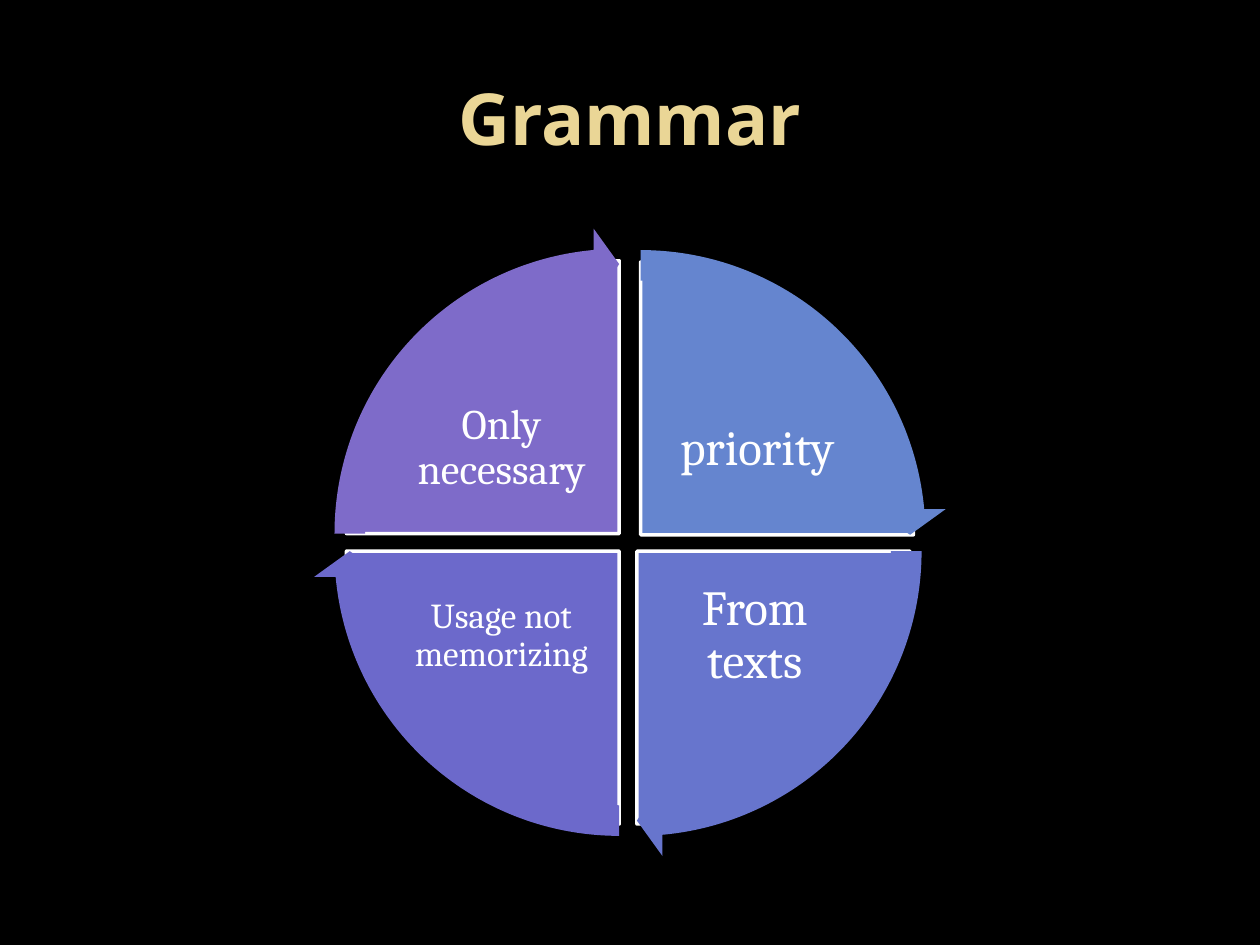
"""Build a slide with a four-part cycle wheel about grammar."""
from pptx import Presentation
from pptx.dml.color import RGBColor
from pptx.enum.shapes import MSO_SHAPE
from pptx.enum.text import MSO_ANCHOR, PP_ALIGN
from pptx.util import Inches, Pt

THEME = {
    "back": "000000", "title": "EAD696", "white": "FFFFFF",
    "parts": ["6585CF", "6775CD", "6C69CB", "7E6BC9"],
    "head": 41, "large": 28, "mid": 24, "small": 20,
    "sans": "Noto Sans", "serif": "Cambria",
}
PIE, RING = 4.33, 4.86
TURN, FULL, TIP = 54, 216, 3.275


def write(slide, text, box, inset, font, **para):
    area = slide.shapes.add_textbox(*map(Inches, box))
    frame = area.text_frame
    look = {"word_wrap": True, "vertical_anchor": MSO_ANCHOR.MIDDLE}
    for side in ("left", "right", "top", "bottom"):
        look[f"margin_{side}"] = Inches(inset)
    line = frame.paragraphs[0]
    run = line.add_run()
    run.text = text
    color = font.pop("color")
    for item, values in ((frame, look), (line, para), (run.font, font)):
        for key, value in values.items():
            setattr(item, key, value)
    run.font.color.rgb = RGBColor.from_string(color)


def draw(slide, kind, left, top, size, color, bends):
    shape = slide.shapes.add_shape(kind, *map(Inches, (left, top, size, size)))
    shape.shadow.inherit = False
    shape.fill.solid()
    shape.fill.fore_color.rgb = RGBColor.from_string(color)
    for spot, bend in enumerate(bends):
        shape.adjustments[spot] = bend
    return shape


deck = Presentation()
deck.slide_width, deck.slide_height = Inches(10), Inches(7.5)
slide = deck.slides.add_slide(deck.slide_layouts[6])
slide.background.fill.solid()
slide.background.fill.fore_color.rgb = RGBColor.from_string(THEME["back"])

write(slide, "Grammar", (0.5, 0.3, 9, 1.25), 0.05,
      {"name": THEME["sans"], "size": Pt(THEME["head"]), "bold": True,
       "color": THEME["title"]}, alignment=PP_ALIGN.CENTER)

parts = [
    ("priority", "large", 2.92, 2.08, 5.21, 2.98, 0.04),
    ("From texts", "large", 2.89, 2.21, 5.19, 4.46, 0.04),
    ("Usage not memorizing", "small", 2.75, 2.21, 3.18, 4.46, 0.03),
    ("Only necessary", "mid", 2.75, 2.07, 3.18, 2.97, 0.03),
]
starts = [(index * TURN - TURN) % FULL for index in range(len(parts))]

for part, color, start in zip(parts, THEME["parts"], starts):
    text, size, left, top, x, y, inset = part
    wedge = draw(slide, MSO_SHAPE.PIE, left, top, PIE, color,
                 (start, (start + TURN) % FULL))
    wedge.line.color.rgb = RGBColor.from_string(THEME["white"])
    wedge.line.width = Pt(2)
    write(slide, text, (x, y, 1.6, 1.18), inset,
          {"name": THEME["serif"], "size": Pt(THEME[size]),
           "color": THEME["white"]},
          alignment=PP_ALIGN.CENTER, line_spacing=0.9)

shift = (RING - PIE) / 2
for part, color, start in zip(parts, THEME["parts"], starts):
    left, top = part[2:4]
    arrow = draw(slide, MSO_SHAPE.CIRCULAR_ARROW, left - shift, top - shift,
                 RING, color, (0.05, TIP, start + TURN - TIP, start, 0.06))
    arrow.line.fill.background()

deck.save("out.pptx")
